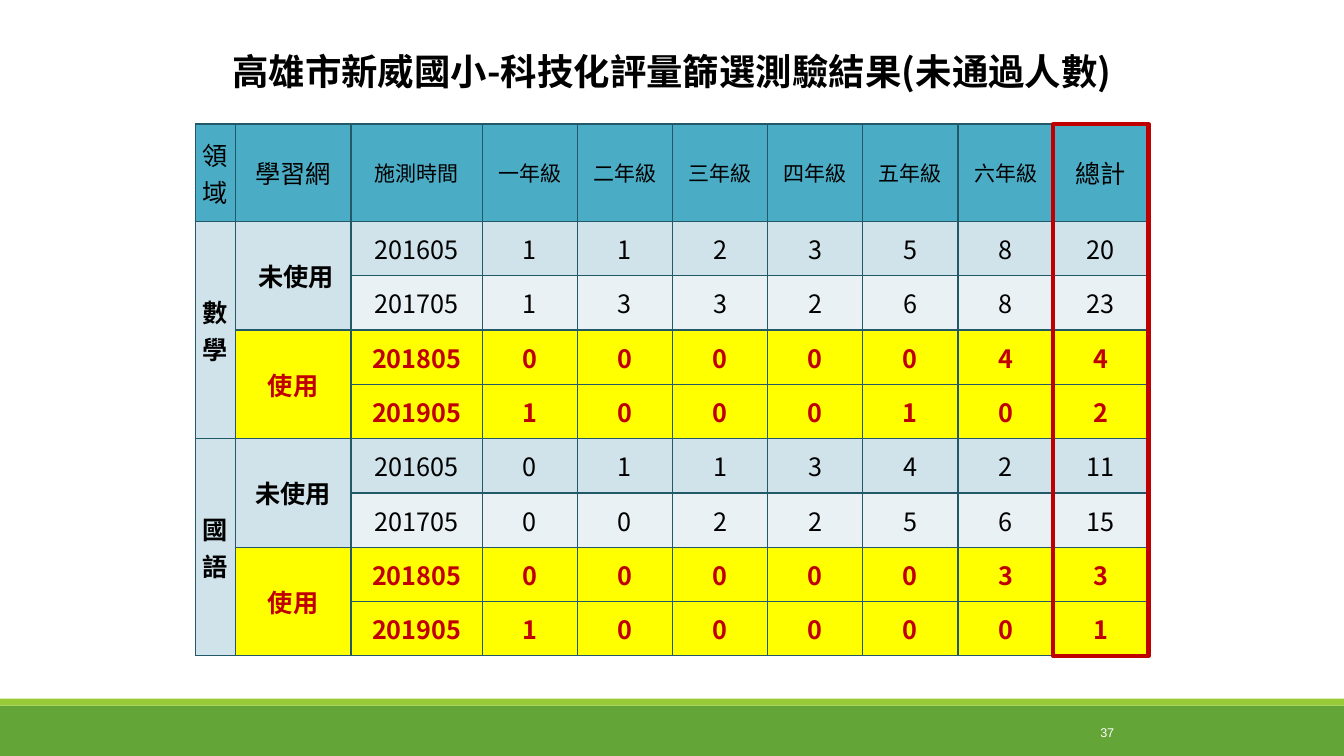
from dataclasses import dataclass
from itertools import accumulate

from lxml.etree import SubElement
from pptx import Presentation
from pptx.dml.color import RGBColor as Rgb
from pptx.enum.shapes import MSO_SHAPE as Shape
from pptx.enum.text import MSO_ANCHOR as Anchor, MSO_AUTO_SIZE as Fit, PP_ALIGN as Align
from pptx.oxml.ns import qn
from pptx.util import Pt


@dataclass(frozen=True)
class Theme:
    """Colours, fonts and type sizes of the slide."""
    dark: str = "63A537"
    lime: str = "99CB38"
    head: str = "4BACC6"
    band: tuple = ("D0E3EA", "E9F1F5")
    mark: str = "FFFF00"
    edge: str = "215968"
    red: str = "C00000"
    black: str = "000000"
    white: str = "FFFFFF"
    sans: str = "Noto Sans CJK SC"
    latin: str = "Arial"
    title: int = 26
    body: int = 18
    grade: int = 15
    page: int = 9


THEME = Theme()
WIDE, HIGH = 960, 540
COLS = [28.4, 82.8, 93.6] + [68] * 7
ROWS = [69.6] + [38.8] * 8
HEADS = ["領域", "學習網", "施測時間", "一年級", "二年級", "三年級",
         "四年級", "五年級", "六年級", "總計"]
DATES = ["201605", "201705", "201805", "201905"]
FIELDS = {
    "數學": (" 未使用", [[1, 1, 2, 3, 5, 8], [1, 3, 3, 2, 6, 8],
                     [0, 0, 0, 0, 0, 4], [1, 0, 0, 0, 1, 0]]),
    "國語": ("未使用", [[0, 1, 1, 3, 4, 2], [0, 0, 2, 2, 5, 6],
                    [0, 0, 0, 0, 0, 3], [1, 0, 0, 0, 0, 0]]),
}


def write(frame, text, size, color, bold=False, align=Align.CENTER, font=THEME.sans):
    """Fill a text frame with one styled paragraph."""
    frame.text = text
    para = frame.paragraphs[0]
    para.alignment = align
    for run in para.runs:
        run.font.size = Pt(size)
        run.font.bold = bold
        run.font.name = font
        run.font.color.rgb = Rgb.from_string(color)
        SubElement(run.font._element, qn("a:ea")).set("typeface", font)


def block(slide, box, fill=None, line=None, width=3):
    """Draw a plain rectangle with an optional fill and outline."""
    rect = slide.shapes.add_shape(Shape.RECTANGLE, *map(Pt, box))
    rect.shadow.inherit = False
    if fill:
        rect.fill.solid()
        rect.fill.fore_color.rgb = Rgb.from_string(fill)
    else:
        rect.fill.background()
    if line:
        rect.line.color.rgb = Rgb.from_string(line)
        rect.line.width = Pt(width)
    else:
        rect.line.fill.background()


def footer(slide, box, page):
    """Draw the two green bars and the page number."""
    left, top, width, height = box
    strip = 5
    block(slide, (left, top + strip, width, height - strip), THEME.dark)
    block(slide, (left, top, width, strip), THEME.lime)
    note = slide.shapes.add_textbox(Pt(left + 764), Pt(top + 15), Pt(39), Pt(18))
    note.text_frame.word_wrap = True
    note.text_frame.vertical_anchor = Anchor.MIDDLE
    write(note.text_frame, page, THEME.page, THEME.white,
          align=Align.RIGHT, font=THEME.latin)


def heading(slide, box, text):
    """Place and format the title placeholder."""
    title = slide.shapes.title
    title.left, title.top, title.width, title.height = map(Pt, box)
    frame = title.text_frame
    frame.auto_size = Fit.NONE
    frame.word_wrap = True
    frame.vertical_anchor = Anchor.MIDDLE
    write(frame, text, THEME.title, THEME.black, True)


def paint(cell, fill):
    """Set the borders, fill and margins of a cell."""
    props = cell._tc.get_or_add_tcPr()
    for side in ("lnL", "lnR", "lnT", "lnB"):
        line = SubElement(props, qn(f"a:{side}"), w=str(Pt(1)))
        SubElement(SubElement(line, qn("a:solidFill")), qn("a:srgbClr"), val=THEME.edge)
    cell.fill.solid()
    cell.fill.fore_color.rgb = Rgb.from_string(fill)
    cell.vertical_anchor = Anchor.MIDDLE
    cell.margin_left = cell.margin_right = Pt(5)
    cell.margin_top = cell.margin_bottom = Pt(3)


def results(slide, left, top):
    """Build the table of counts and frame its total column."""
    width, height = sum(COLS), sum(ROWS)
    grid = slide.shapes.add_table(len(ROWS), len(COLS), Pt(left), Pt(top),
                                  Pt(width), Pt(height)).table
    grid.horz_banding = False
    for col, size in zip(grid.columns, COLS):
        col.width = Pt(size)
    for row, size in zip(grid.rows, ROWS):
        row.height = Pt(size)

    for col, text in enumerate(HEADS):
        cell = grid.cell(0, col)
        paint(cell, THEME.head)
        size = THEME.grade if 2 <= col <= 8 else THEME.body
        write(cell.text_frame, text, size, THEME.black)

    for part, (field, (unused, counts)) in enumerate(FIELDS.items()):
        first = 1 + part * len(DATES)
        for step, (date, nums) in enumerate(zip(DATES, counts)):
            used = step >= 2
            fill = THEME.mark if used else THEME.band[step]
            color = THEME.red if used else THEME.black
            row = first + step
            paint(grid.cell(row, 0), THEME.band[0])
            paint(grid.cell(row, 1), THEME.mark if used else THEME.band[0])
            for col, value in enumerate([date, *nums, sum(nums)], 2):
                cell = grid.cell(row, col)
                paint(cell, fill)
                write(cell.text_frame, str(value), THEME.body, color, used)
        labels = [(0, 0, 4, field, THEME.black), (0, 1, 2, unused, THEME.black),
                  (2, 1, 2, "使用", THEME.red)]
        for step, col, span, text, color in labels:
            cell = grid.cell(first + step, col)
            cell.merge(grid.cell(first + step + span - 1, col))
            write(cell.text_frame, text, THEME.body, color, True)

    edge = list(accumulate(COLS))[-2]
    block(slide, (left + edge, top, COLS[-1], height), line=THEME.red)


def main():
    """Build the slide and save it."""
    deck = Presentation()
    deck.slide_width, deck.slide_height = Pt(WIDE), Pt(HIGH)
    slide = deck.slides.add_slide(deck.slide_layouts[5])
    footer(slide, (0, 499, WIDE, 41), "37")
    results(slide, 139.6, 88.6)
    heading(slide, (120, 31.4, 720, 39),
            "高雄市新威國小-科技化評量篩選測驗結果(未通過人數)")
    deck.save("out.pptx")


if __name__ == "__main__":
    main()
